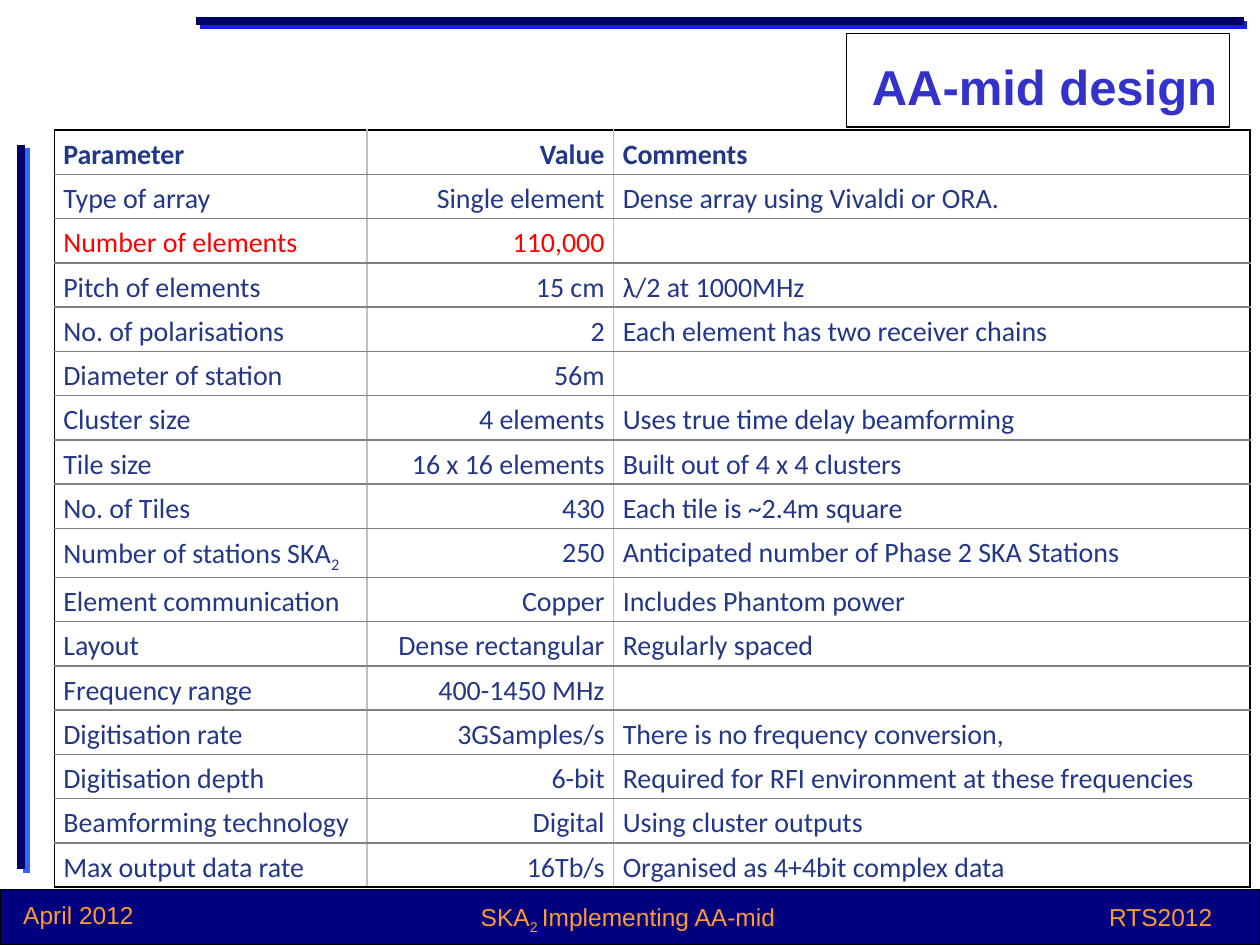
import lxml.etree
import pptx
import pptx.dml.color
import pptx.enum.shapes
import pptx.enum.text
import pptx.oxml
import pptx.oxml.ns
import pptx.util
from dataclasses import dataclass

Pt = pptx.util.Pt
ALIGN = pptx.enum.text.PP_ALIGN
ANCHOR = pptx.enum.text.MSO_ANCHOR
SUB = "_"  # a run that starts with this mark is set as a subscript


@dataclass(frozen=True)
class Theme:
    paper: str = "FFFFFF"
    ink: str = "000000"
    band: str = "00007E"
    rule: str = "000066"
    side_shadow: str = "3366FF"
    top_shadow: str = "1819FF"
    title: str = "3333CC"
    footer: str = "FF9933"
    body: str = "233787"
    alert: str = "FF0000"
    row_line: str = "808080"
    column_line: str = "BFBFBF"
    heading_font: str = "Arial"
    body_font: str = "Calibri"
    title_size: int = 28
    body_size: int = 16
    footer_size: int = 14


def rgb(value):
    return pptx.dml.color.RGBColor.from_string(value)


def add_element(parent, tag, **attributes):
    element = lxml.etree.SubElement(parent, pptx.oxml.ns.qn(tag))
    for name, value in attributes.items():
        element.set(name, str(value))
    return element


def write_text(frame, runs, font, size, color, bold=False, align=ALIGN.LEFT,
               spacing=None, after=None):
    """Write one paragraph from a string or a tuple of runs."""
    para = frame.paragraphs[0]
    para.alignment = align
    para.line_spacing = spacing
    if after is not None:
        para.space_after = Pt(after)
    for text in (runs,) if isinstance(runs, str) else runs:
        span = para.add_run()
        span.text = text.removeprefix(SUB)
        span.font.name = font
        span.font.size = Pt(size)
        span.font.bold = bold
        span.font.color.rgb = rgb(color)
        if text.startswith(SUB):
            span.font._element.set("baseline", "-25000")


class Page:
    def __init__(self, deck, theme):
        self.theme = theme
        self.slide = deck.slides.add_slide(deck.slide_layouts.get_by_name("Title Only"))
        self.shapes = self.slide.shapes

    def paint(self, shape, fill):
        shape.fill.solid()
        shape.fill.fore_color.rgb = rgb(fill)
        shape.line.color.rgb = rgb(self.theme.ink)
        shape.line.width = Pt(0.75)

    def title(self, text, left, top, width, height):
        box = self.shapes.title
        box.left, box.top, box.width, box.height = map(Pt, (left, top, width, height))
        self.paint(box, self.theme.paper)
        box.text_frame.vertical_anchor = ANCHOR.MIDDLE
        write_text(box.text_frame, text, self.theme.heading_font, self.theme.title_size,
                   self.theme.title, bold=True, align=ALIGN.RIGHT, spacing=1.2, after=12)

    def band(self, left, top, width, height):
        band = self.shapes.add_shape(pptx.enum.shapes.MSO_SHAPE.RECTANGLE,
                                     *map(Pt, (left, top, width, height)))
        band.shadow.inherit = False
        self.paint(band, self.theme.band)

    def rule(self, start, end, shadow, distance, angle):
        line = self.shapes.add_connector(pptx.enum.shapes.MSO_CONNECTOR.STRAIGHT,
                                         *map(Pt, start + end))
        line.line.color.rgb = rgb(self.theme.rule)
        line.line.width = Pt(4.5)
        effects = add_element(line._element.spPr, "a:effectLst")
        outer = add_element(effects, "a:outerShdw", dist=int(Pt(distance)),
                            dir=angle * 60000, algn="ctr", rotWithShape=0)
        add_element(outer, "a:srgbClr", val=shadow)

    def footer(self, runs, left, top, width, align):
        box = self.shapes.add_textbox(*map(Pt, (left, top, width, 26)))
        box.text_frame.word_wrap = True
        write_text(box.text_frame, runs, self.theme.heading_font,
                   self.theme.footer_size, self.theme.footer, align=align)

    def border(self, cell, **colors):
        properties = cell._tc.get_or_add_tcPr()
        for place, (side, color) in enumerate(colors.items()):
            line = pptx.oxml.parse_xml(
                f'<a:{side} {pptx.oxml.ns.nsdecls("a")} w="{int(Pt(1))}">'
                f'<a:solidFill><a:srgbClr val="{color}"/></a:solidFill></a:{side}>')
            properties.insert(place, line)

    def table(self, rows, left, top, widths, row_height, alert_row):
        theme = self.theme
        last_row, last_column = len(rows) - 1, len(widths) - 1
        table = self.shapes.add_table(
            len(rows), len(widths),
            *map(Pt, (left, top, sum(widths), row_height * len(rows)))).table
        table.first_row = table.horz_banding = False
        for column, width in zip(table.columns, widths):
            column.width = Pt(width)
        aligns = (ALIGN.LEFT, ALIGN.RIGHT, ALIGN.JUSTIFY)
        for i, row in enumerate(rows):
            table.rows[i].height = Pt(row_height)
            for j, runs in enumerate(row):
                cell = table.cell(i, j)
                cell.margin_left = cell.margin_right = Pt(5.2)
                cell.margin_top = cell.margin_bottom = Pt(1.44)
                cell.fill.solid()
                cell.fill.fore_color.rgb = rgb(theme.paper)
                self.border(cell,
                            lnL=theme.column_line if j else theme.ink,
                            lnR=theme.column_line if j < last_column else theme.ink,
                            lnT=theme.row_line if i else theme.ink,
                            lnB=theme.row_line if i < last_row else theme.ink)
                if runs:
                    write_text(cell.text_frame, runs, theme.body_font, theme.body_size,
                               theme.alert if i == alert_row else theme.body,
                               bold=i == 0, align=aligns[j], spacing=1.15)


PARAMETERS = [
    ("Parameter", "Value", "Comments"),
    ("Type of array", "Single element", "Dense array using Vivaldi or ORA."),
    ("Number of elements", "110,000", ""),
    ("Pitch of elements", "15 cm", "λ/2 at 1000MHz"),
    ("No. of polarisations", "2", "Each element has two receiver chains"),
    ("Diameter of station", "56m", ""),
    ("Cluster size", "4 elements", "Uses true time delay beamforming"),
    ("Tile size", "16 x 16 elements", "Built out of 4 x 4 clusters"),
    ("No. of Tiles", "430", "Each tile is ~2.4m square"),
    (("Number of stations SKA", "_2"), "250", "Anticipated number of Phase 2 SKA Stations"),
    ("Element communication", "Copper", "Includes Phantom power"),
    ("Layout", "Dense rectangular", "Regularly spaced"),
    ("Frequency range", "400-1450 MHz", ""),
    ("Digitisation rate", "3GSamples/s", "There is no frequency conversion,"),
    ("Digitisation depth", "6-bit", "Required for RFI environment at these frequencies"),
    ("Beamforming technology", "Digital", "Using cluster outputs"),
    ("Max output data rate", "16Tb/s", "Organised as 4+4bit complex data"),
]


def main():
    deck = pptx.Presentation()
    deck.slide_width, deck.slide_height = Pt(720), Pt(540)
    theme = Theme()
    page = Page(deck, theme)

    # Frame: bottom band and the two shadowed rules
    page.band(0, 508.3, 720, 31.7)
    page.rule((12.2, 82.8), (12.2, 496.8), theme.side_shadow, 3.6, 34)
    page.rule((710.6, 12.2), (112.3, 12.2), theme.top_shadow, 2.8, 45)

    # Footer
    page.footer("RTS2012", 481, 511.9, 218.9, ALIGN.RIGHT)
    page.footer("April 2012", 6.2, 511, 218.9, ALIGN.LEFT)
    page.footer(("SKA", "_2 ", "Implementing AA-mid"), 217.4, 511.9, 283, ALIGN.CENTER)

    # Design parameters
    page.table(PARAMETERS, 31, 74.4, (178.6, 141.1, 363.6), 25.3, alert_row=2)
    page.title("AA-mid design", 483.8, 19.2, 218.9, 53.5)

    deck.save("out.pptx")


if __name__ == "__main__":
    main()
